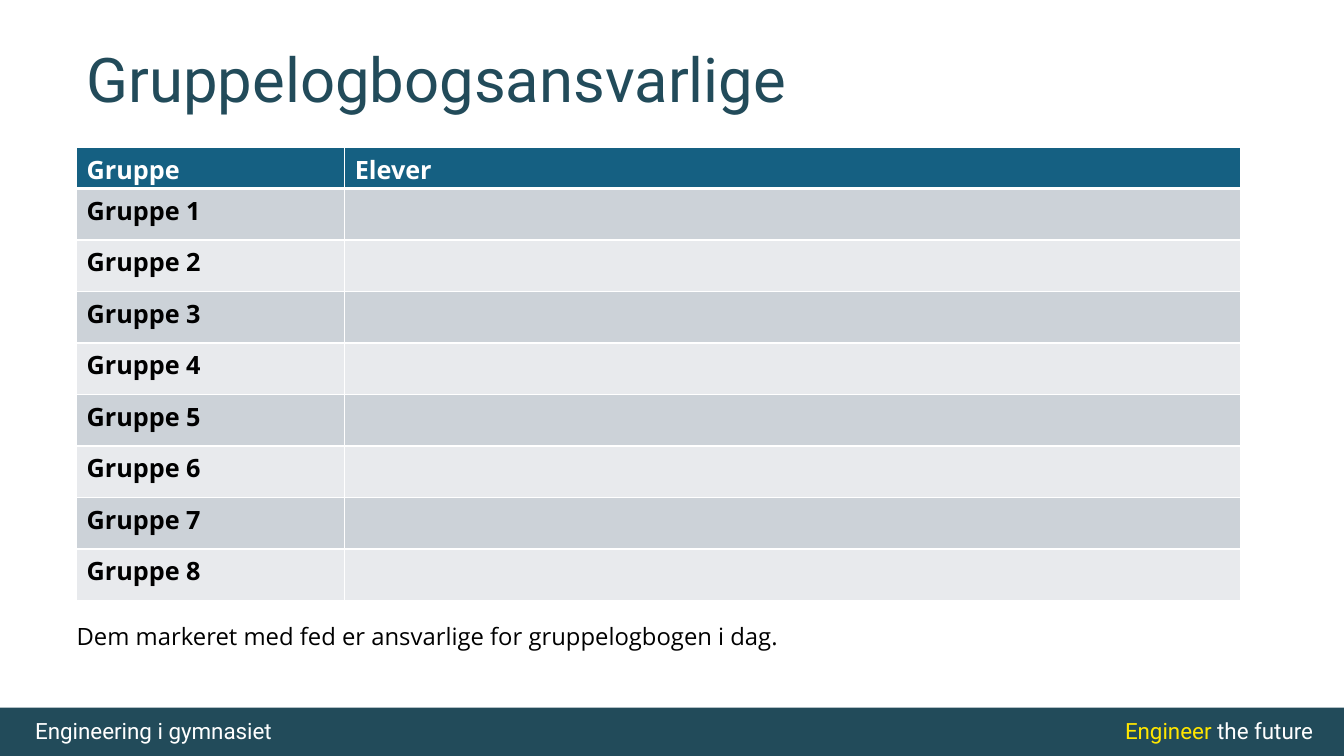
from dataclasses import dataclass

from lxml.etree import SubElement
from pptx import Presentation
from pptx.dml.color import RGBColor
from pptx.enum.shapes import MSO_SHAPE
from pptx.enum.text import MSO_ANCHOR
from pptx.oxml.ns import qn
from pptx.util import Inches, Pt


@dataclass(frozen=True)
class Theme:
    dark: str = "224B5A"
    header: str = "156082"
    bands: tuple = ("CCD2D8", "E8EAED")
    white: str = "FFFFFF"
    black: str = "000000"
    yellow: str = "FFE600"
    heading_font: str = "Roboto"
    body_font: str = "Open Sans"
    title_size: int = 44
    table_size: int = 18
    note_size: int = 17
    footer_size: int = 16


THEME = Theme()


def format_run(run, name, size, color, bold=False):
    run.font.name = name
    run.font.size = Pt(size)
    run.font.bold = bold
    run.font.color.rgb = RGBColor.from_string(color)


def add_text(slide, left, top, width, height, pieces, font, size):
    shape = slide.shapes.add_textbox(
        Inches(left), Inches(top), Inches(width), Inches(height))
    shape.text_frame.word_wrap = True
    paragraph = shape.text_frame.paragraphs[0]
    for text, color in pieces:
        run = paragraph.add_run()
        run.text = text
        format_run(run, font, size, color)
    return shape


def add_footer(slide, left, top, width, height):
    bar = slide.shapes.add_shape(
        MSO_SHAPE.RECTANGLE,
        Inches(left), Inches(top), Inches(width), Inches(height))
    bar.shadow.inherit = False
    bar.fill.solid()
    bar.fill.fore_color.rgb = RGBColor.from_string(THEME.dark)
    bar.line.fill.background()
    labels = (
        (0.25, 3.62, [("Engineering i gymnasiet", THEME.white)]),
        (11.06, 2.27, [("Engineer", THEME.yellow), (" the future", THEME.white)]),
    )
    for offset, label_width, pieces in labels:
        add_text(slide, left + offset, top + 0.05, label_width, 0.37, pieces,
                 THEME.heading_font, THEME.footer_size)


def add_title(slide, left, top, width, height, text):
    title = slide.shapes.title
    title.left, title.top = Inches(left), Inches(top)
    title.width, title.height = Inches(width), Inches(height)
    frame = title.text_frame
    frame.text = text
    frame.vertical_anchor = MSO_ANCHOR.MIDDLE
    paragraph = frame.paragraphs[0]
    paragraph.line_spacing = 0.9
    properties = paragraph._p.get_or_add_pPr()
    properties.set("algn", "l")
    format_run(paragraph.runs[0], THEME.heading_font, THEME.title_size, THEME.dark)


def set_borders(cell, top, bottom):
    properties = cell._tc.get_or_add_tcPr()
    for side, points in (("L", 1), ("R", 1), ("T", top), ("B", bottom)):
        line = SubElement(properties, qn(f"a:ln{side}"), w=str(Pt(points)))
        fill = SubElement(line, qn("a:solidFill"))
        SubElement(fill, qn("a:srgbClr"), val=THEME.white)


def add_group_table(slide, left, top, width, height, group_count):
    header_height, group_width = 0.41, 2.66
    rows = [("Gruppe", "Elever")]
    rows += [(f"Gruppe {number}", "") for number in range(1, group_count + 1)]
    table = slide.shapes.add_table(
        len(rows), 2,
        Inches(left), Inches(top), Inches(width), Inches(height)).table
    table.columns[0].width = Inches(group_width)
    table.columns[1].width = Inches(width - group_width)
    row_height = (height - header_height) / group_count
    for index, texts in enumerate(rows):
        is_header = index == 0
        table.rows[index].height = Inches(header_height if is_header else row_height)
        fill = THEME.header if is_header else THEME.bands[(index - 1) % 2]
        color = THEME.white if is_header else THEME.black
        for column, text in enumerate(texts):
            cell = table.cell(index, column)
            set_borders(cell, 3 if index == 1 else 1, 3 if is_header else 1)
            cell.fill.solid()
            cell.fill.fore_color.rgb = RGBColor.from_string(fill)
            if text:
                cell.text_frame.text = text
                format_run(cell.text_frame.paragraphs[0].runs[0],
                           THEME.body_font, THEME.table_size, color, True)


def add_note(slide, left, top, width, height, text):
    note = add_text(slide, left, top, width, height, [(text, THEME.black)],
                    THEME.body_font, THEME.note_size)
    note.text_frame.margin_left = note.text_frame.margin_right = 0


def main():
    presentation = Presentation()
    presentation.slide_width = Inches(13.33)
    presentation.slide_height = Inches(7.5)
    slide = presentation.slides.add_slide(presentation.slide_layouts[5])
    add_footer(slide, 0, 7.02, 13.33, 0.48)
    add_title(slide, 0.76, 0.09, 11.5, 1.45, "Gruppelogbogsansvarlige")
    add_group_table(slide, 0.76, 1.46, 11.54, 4.5, 8)
    add_note(slide, 0.76, 6.12, 11.51, 0.69,
             "Dem markeret med fed er ansvarlige for gruppelogbogen i dag.")
    presentation.save("out.pptx")


if __name__ == "__main__":
    main()
